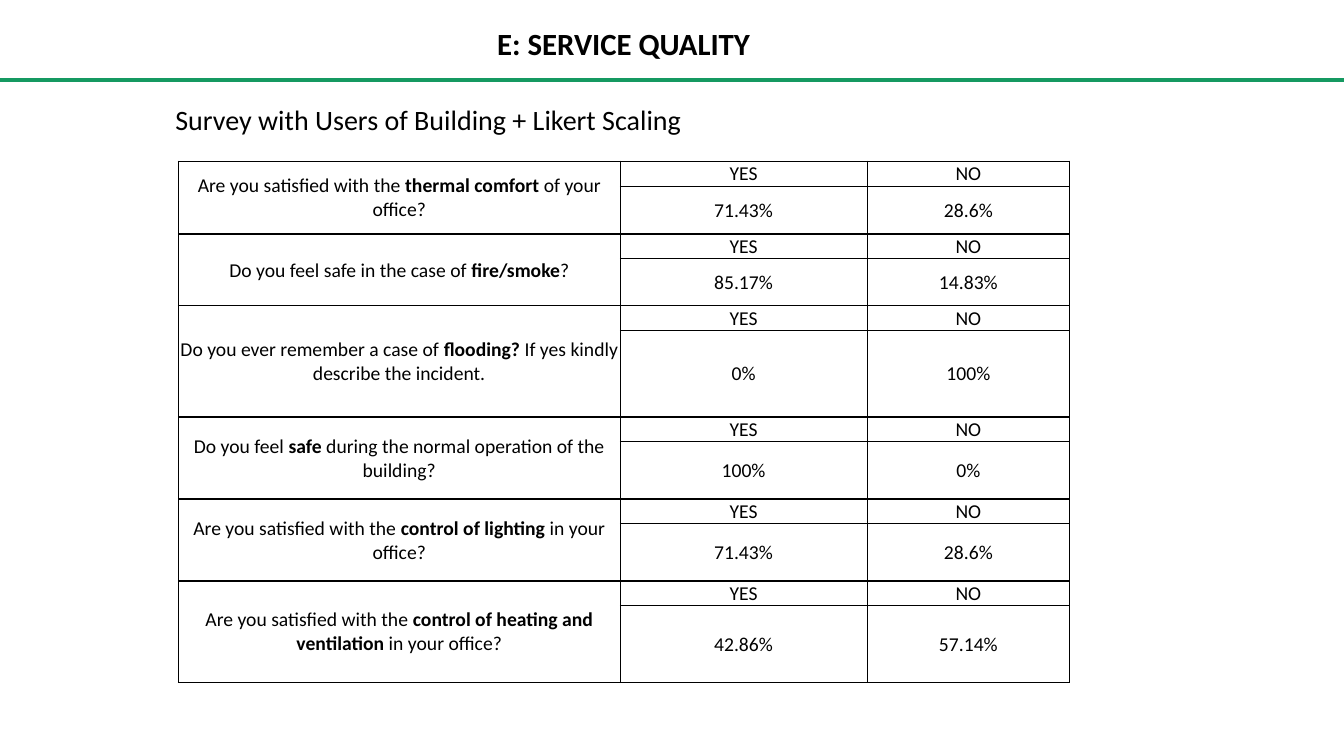
from lxml import etree
from pptx import Presentation
from pptx.dml.color import RGBColor
from pptx.enum import shapes, text
from pptx.oxml import ns
from pptx.util import Inches, Pt

BLACK = RGBColor(0, 0, 0)
GREEN = RGBColor(0x15, 0x99, 0x61)
FONT = "Calibri"
THIN, THICK = 0.5, 1

COLUMN_WIDTHS = [4.38, 2.45, 2.01]
LABEL_HEIGHT = 0.24
CELL_MARGINS = {"margin_left": 0.01, "margin_top": 0.01, "margin_right": 0.01, "margin_bottom": 0}

# Question before, in and after bold; yes; no; height of the answer row
SURVEY = [
    (("Are you satisfied with the ", "thermal comfort ", "of your office?"), "71.43%", "28.6%", 0.46),
    (("Do you feel safe in the case of ", "fire/smoke", "?"), "85.17%", "14.83%", 0.47),
    (("Do you ever remember a case of ", "flooding?", " If yes kindly describe the incident."),
     "0%", "100%", 0.86),
    (("Do you feel", " safe ", "during the normal operation of the building?"), "100%", "0%", 0.57),
    (("Are you satisfied with the ", "control of lighting ", "in your office?"), "71.43%", "28.6%", 0.57),
    (("Are you satisfied with the ", "control of heating and ventilation ", "in your office?"),
     "42.86%", "57.14%", 0.76),
]


def add_span(para, words, size, bold=False):
    span = para.add_run()
    span.text = words
    for name, value in {"name": FONT, "size": Pt(size), "bold": bold}.items():
        setattr(span.font, name, value)
    span.font.color.rgb = BLACK


def add_rule(page, top):
    rule = page.shapes.add_connector(
        shapes.MSO_CONNECTOR.STRAIGHT, 0, Inches(top), Inches(13.33), Inches(top))
    rule.line.color.rgb = GREEN
    rule.line.width = Pt(3)
    etree.SubElement(rule._element.spPr, ns.qn("a:effectLst"))


def add_text(page, place, words, size, bold=False, align=text.PP_ALIGN.LEFT,
             anchor=text.MSO_ANCHOR.TOP):
    frame = page.shapes.add_textbox(*map(Inches, place)).text_frame
    frame.word_wrap = True
    frame.vertical_anchor = anchor
    frame.paragraphs[0].alignment = align
    add_span(frame.paragraphs[0], words, size, bold)


def set_borders(cell, left, right, top, bottom):
    """Draw the four sides of a cell in black, with widths in points."""
    properties = cell._tc.get_or_add_tcPr()
    for index, (side, width) in enumerate(zip("LRTB", (left, right, top, bottom))):
        border = etree.Element(ns.qn(f"a:ln{side}"), w=str(Pt(width)))
        fill = etree.SubElement(border, ns.qn("a:solidFill"))
        etree.SubElement(fill, ns.qn("a:srgbClr"), val=str(BLACK))
        properties.insert(index, border)


def fill_cell(cell, *parts):
    """Write centred text, with every second part in bold."""
    for name, value in CELL_MARGINS.items():
        setattr(cell, name, Inches(value))
    cell.vertical_anchor = text.MSO_ANCHOR.MIDDLE
    para = cell.text_frame.paragraphs[0]
    para.alignment = text.PP_ALIGN.CENTER
    for index, words in enumerate(parts):
        add_span(para, words, 14, index % 2 == 1)


def add_survey_table(page, left, top):
    heights = [height for entry in SURVEY for height in (LABEL_HEIGHT, entry[-1])]
    table = page.shapes.add_table(
        len(heights), len(COLUMN_WIDTHS), Inches(left), Inches(top),
        Inches(sum(COLUMN_WIDTHS)), Inches(sum(heights))).table
    table.first_row = table.horz_banding = False
    for column, width in zip(table.columns, COLUMN_WIDTHS):
        column.width = Inches(width)
    for row, height in zip(table.rows, heights):
        row.height = Inches(height)

    for index, (question, yes, no, _) in enumerate(SURVEY):
        label_row, answer_row = 2 * index, 2 * index + 1
        question_cell = table.cell(label_row, 0)
        question_cell.merge(table.cell(answer_row, 0))
        fill_cell(question_cell, *question)
        for column, (label, answer) in enumerate((("YES", yes), ("NO", no)), start=1):
            fill_cell(table.cell(label_row, column), label)
            fill_cell(table.cell(answer_row, column), answer)

    for row in range(len(heights)):
        for column in range(len(COLUMN_WIDTHS)):
            cell = table.cell(row, column)
            cell.fill.background()
            inner = THICK if column == 0 else THIN
            set_borders(
                cell,
                left=THICK if column == 0 else THIN,
                right=THICK if column == 2 else THIN,
                top=THICK if row % 2 == 0 else inner,
                bottom=THICK if row % 2 == 1 else inner)


def main():
    deck = Presentation()
    deck.slide_width, deck.slide_height = Inches(13.33), Inches(7.5)
    page = deck.slides.add_slide(deck.slide_layouts[6])
    add_rule(page, 0.79)
    add_text(page, (1.39, 0.18, 9.59, 0.5), "E: SERVICE QUALITY", 22, bold=True,
             align=text.PP_ALIGN.CENTER, anchor=text.MSO_ANCHOR.MIDDLE)
    add_text(page, (1.64, 0.97, 7.55, 0.77), "Survey with Users of Building + Likert Scaling", 20)
    add_survey_table(page, 1.77, 1.6)
    deck.save("out.pptx")


if __name__ == "__main__":
    main()
